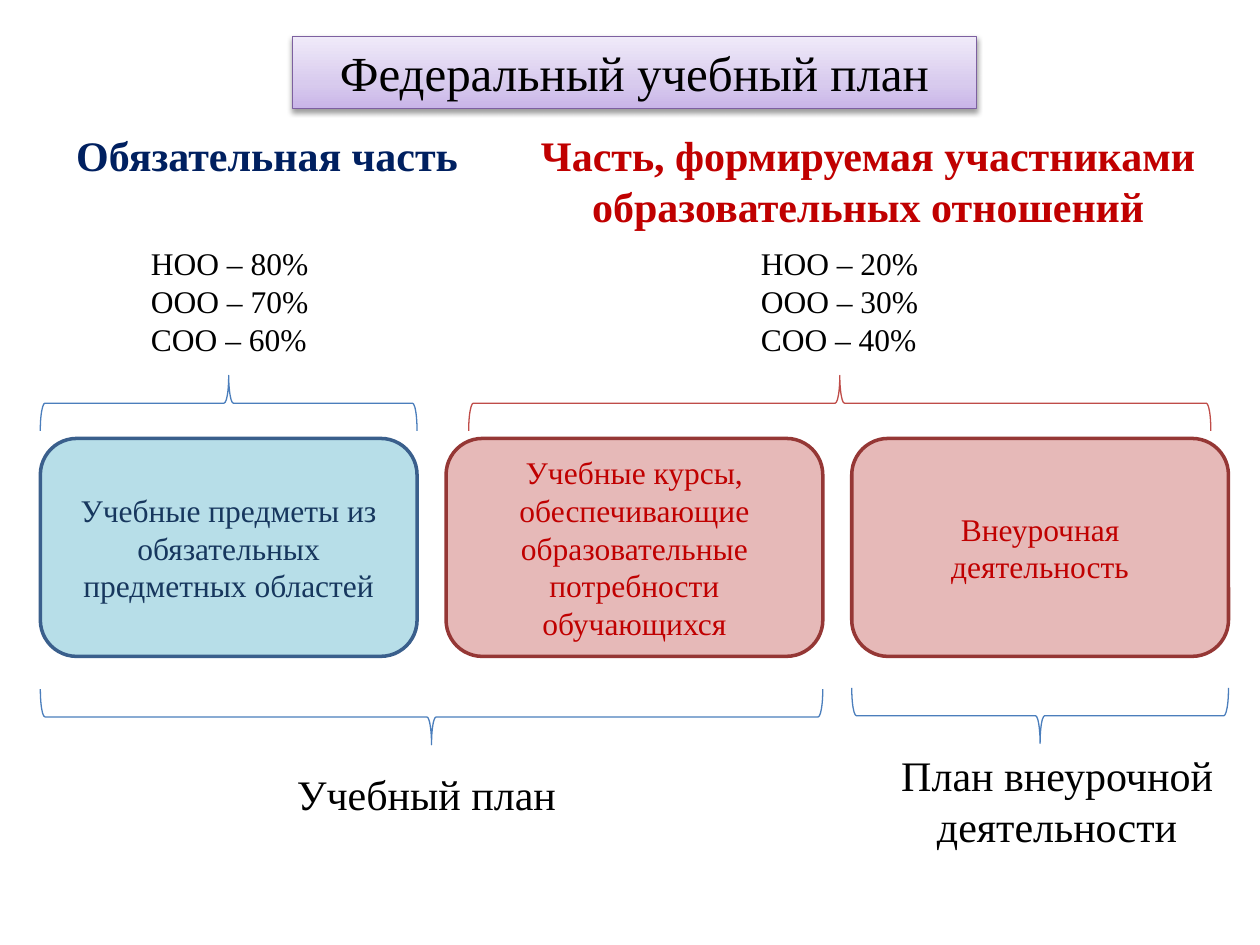
from lxml import etree
from pptx import Presentation
from pptx.dml.color import RGBColor
from pptx.enum.shapes import MSO_SHAPE
from pptx.enum.text import MSO_ANCHOR, PP_ALIGN
from pptx.oxml import parse_xml
from pptx.oxml.ns import nsdecls, qn
from pptx.util import Inches, Pt

BLUE, RED, BLACK = "4B7EBC", "C00000", "000000"


def rgb(value):
    return RGBColor.from_string(value)


class SlideBuilder:
    font = "Times New Roman"

    def __init__(self, slide):
        self.s = slide

    def add_lines(self, sp, lines, size, color, bold=False, align=PP_ALIGN.CENTER,
                  anchor=MSO_ANCHOR.TOP):
        tf = sp.text_frame
        tf.word_wrap = True
        tf.vertical_anchor = anchor
        for i, line in enumerate(lines):
            p = tf.paragraphs[0] if i == 0 else tf.add_paragraph()
            p.alignment = align
            r = p.add_run()
            r.text = line
            r.font.name = self.font
            r.font.size = Pt(size)
            r.font.bold = bold
            r.font.color.rgb = rgb(color)

    def text(self, box, lines, size, color=BLACK, **style):
        sp = self.s.shapes.add_textbox(*map(Inches, box))
        self.add_lines(sp, lines, size, color, **style)

    def shape(self, kind, box, line, width):
        sp = self.s.shapes.add_shape(kind, *map(Inches, box))
        sp.shadow.inherit = False
        sp.line.color.rgb = rgb(line)
        sp.line.width = Pt(width)
        return sp

    def card(self, box, text, fill, line, color):
        sp = self.shape(MSO_SHAPE.ROUNDED_RECTANGLE, box, line, 2)
        sp.fill.solid()
        sp.fill.fore_color.rgb = rgb(fill)
        self.add_lines(sp, [text], 18, color, anchor=MSO_ANCHOR.MIDDLE)

    def brace(self, left, top, span, rotation, color=BLUE, depth=0.44):
        """Horizontal brace; left, top and span describe it after rotation."""
        shift = (span - depth) / 2
        box = (left + shift, top - shift, depth, span)
        sp = self.shape(MSO_SHAPE.LEFT_BRACE, box, color, 0.75)
        sp.fill.background()
        sp.rotation = rotation

    def banner(self, box, text, stops):
        """Title plate with a vertical gradient and a soft shadow."""
        sp = self.shape(MSO_SHAPE.RECTANGLE, box, "7D60A0", 0.75)
        sp.fill.gradient()
        sp.fill.gradient_angle = 90
        stop_list = sp._element.spPr.find(".//" + qn("a:gsLst"))
        for stop in list(stop_list):
            stop_list.remove(stop)
        for position, color in stops:
            stop_list.append(parse_xml(
                f'<a:gs {nsdecls("a")} pos="{position * 1000}">'
                f'<a:srgbClr val="{color}"/></a:gs>'))
        effects = sp._element.spPr.find(qn("a:effectLst"))
        shadow = etree.SubElement(effects, qn("a:outerShdw"), blurRad=str(Pt(3.1)),
                                  dist=str(Pt(1.6)), dir="5400000", rotWithShape="0")
        tint = etree.SubElement(shadow, qn("a:srgbClr"), val=BLACK)
        etree.SubElement(tint, qn("a:alpha"), val="38000")
        self.add_lines(sp, [text], 28, BLACK)


def main():
    prs = Presentation()
    prs.slide_width, prs.slide_height = Inches(10), Inches(7.5)
    b = SlideBuilder(prs.slides.add_slide(prs.slide_layouts[6]))

    b.banner((2.32, 0.29, 5.43, 0.57), "Федеральный учебный план",
             [(0, "C9B5E8"), (35, "D8CBEE"), (100, "F0EAF9")])
    b.text((0.35, 0.98, 3.54, 0.5), ["Обязательная часть"], 24, "002060", bold=True)
    b.text((4.09, 0.98, 5.6, 0.91),
           ["Часть, формируемая участниками", "образовательных отношений"],
           24, RED, bold=True)

    levels = ("НОО", "ООО", "СОО")
    for left, shares in ((1.1, (80, 70, 60)), (5.94, (20, 30, 40))):
        lines = [f"{level} – {share}%" for level, share in zip(levels, shares)]
        b.text((left, 1.89, 2.44, 1.01), lines, 18, align=PP_ALIGN.LEFT)

    card_left, card_top, card_w, card_h, step = 0.32, 3.48, 2.99, 1.73, 3.22
    pink = ("E6B9B8", "953735", RED)
    cards = [
        ("Учебные предметы из обязательных предметных областей",
         ("B7DEE8", "3A5F8C", "17375E")),
        ("Учебные курсы, обеспечивающие образовательные потребности обучающихся", pink),
        ("Внеурочная деятельность", pink),
    ]
    for i, (text, colors) in enumerate(cards):
        b.card((card_left + i * step, card_top, card_w, card_h), text, *colors)

    b.brace(card_left, 2.98, card_w, 90)
    b.brace(3.72, 2.98, 5.89, 90, "BF4C48")
    b.brace(card_left, 5.47, step + card_w, 270)
    b.brace(card_left + 2 * step, 5.46, card_w, 270)

    b.text((1.95, 6.05, 2.87, 0.5), ["Учебный план"], 24)
    b.text((6.98, 5.9, 2.82, 0.91), ["План внеурочной деятельности"], 24)

    prs.save("out.pptx")


if __name__ == "__main__":
    main()
